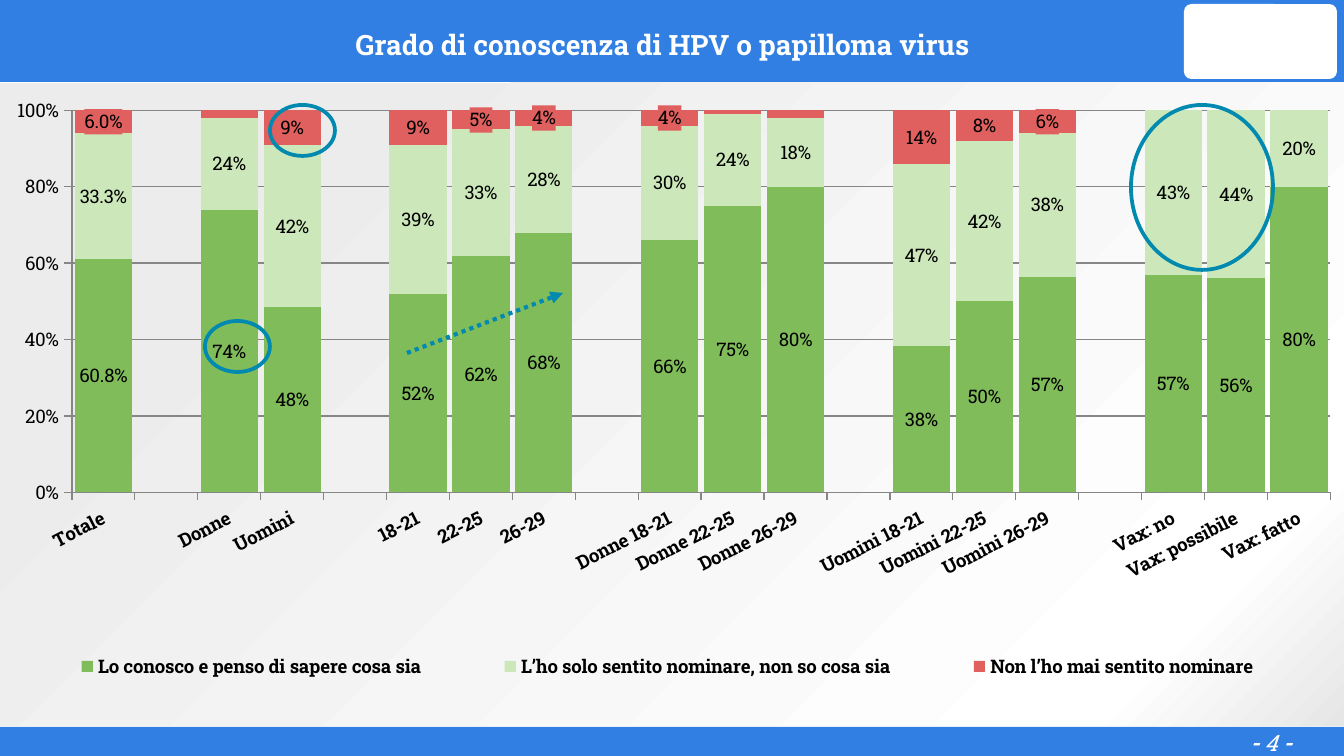
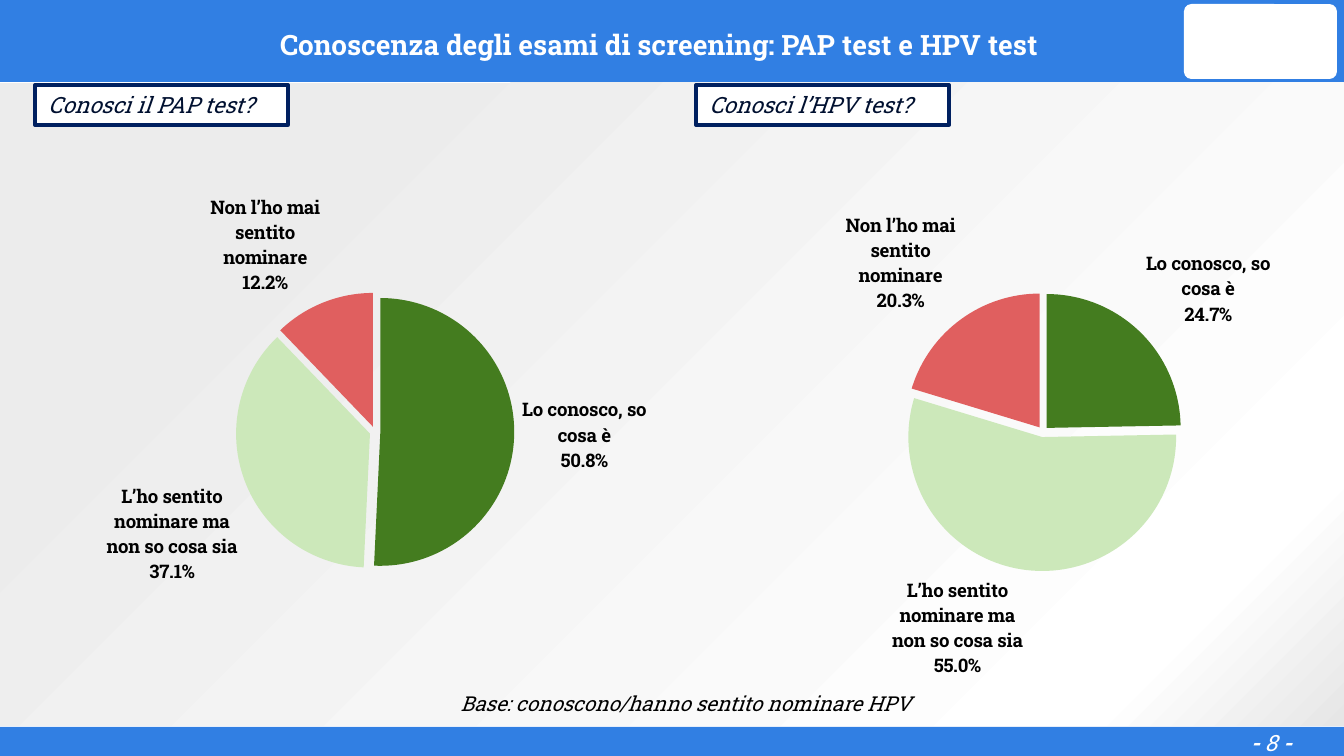
import copy
from dataclasses import dataclass

import pptx
import pptx.chart.data
import pptx.dml.color
import pptx.enum.chart
import pptx.enum.dml
import pptx.enum.shapes
import pptx.enum.text
import pptx.oxml
import pptx.oxml.ns
import pptx.util

SHAPES = pptx.enum.shapes.MSO_SHAPE
ALIGN = pptx.enum.text.PP_ALIGN
CHARTS = pptx.enum.chart.XL_CHART_TYPE
LABELS = pptx.enum.chart.XL_LABEL_POSITION


@dataclass(frozen=True)
class Theme:
    font: str = "Roboto Slab"
    band: str = "317FE3"
    white: str = "FFFFFF"
    black: str = "000000"
    question: str = "001030"
    frame: str = "002060"
    accent: str = "0189AF"
    grid: str = "868686"
    green: str = "81BC5B"
    dark_green: str = "447C1F"
    pale_green: str = "CCE8BA"
    red: str = "E05F5F"
    backdrop: tuple = ((0, "E6E6E6"), (13, "FFFFFF"), (82, "ECECEC"))
    title_size: int = 15
    body_size: int = 12
    note_size: int = 11
    chart_size: int = 10


THEME = Theme()
SCALE = 914400 / 134.4
WIDTH, HEIGHT = 1344, 756
CHART_TOP, CHART_HEIGHT = 85, 639

KNOWLEDGE_TITLE = "Grado di conoscenza di HPV o papilloma virus"
GROUPS = [
    [("Totale", 0.61, 0.33, 0.06)],
    [("Donne", 0.74, 0.24, 0.02), ("Uomini", 0.48, 0.42, 0.09)],
    [("18-21", 0.52, 0.39, 0.09), ("22-25", 0.62, 0.33, 0.05), ("26-29", 0.68, 0.28, 0.04)],
    [("Donne 18-21", 0.66, 0.3, 0.04), ("Donne 22-25", 0.75, 0.24, 0.01),
     ("Donne 26-29", 0.8, 0.18, 0.02)],
    [("Uomini 18-21", 0.38, 0.47, 0.14), ("Uomini 22-25", 0.5, 0.42, 0.08),
     ("Uomini 26-29", 0.57, 0.38, 0.06)],
    [("Vax: no", 0.57, 0.43, 0), ("Vax: possibile", 0.56, 0.44, 0), ("Vax: fatto", 0.8, 0.2, 0)],
]
ANSWERS = [
    ("Lo conosco e penso di sapere cosa sia", THEME.green, "60.8%"),
    ("L’ho solo sentito nominare, non so cosa sia", THEME.pale_green, "33.3%"),
    ("Non l’ho mai sentito nominare", THEME.red, "6.0%"),
]
SMALLEST_LABELLED = 0.03
HIGHLIGHTS = [(205, 321, 65, 51), (270, 105, 65, 51), (1131, 105, 142, 165)]
TREND = (407, 353, 563, 293)

SCREENING_TITLE = "Conoscenza degli esami di screening: PAP test e HPV test"
SCREENING_ANSWERS = [
    ("Lo conosco, so cosa è", THEME.dark_green),
    ("L’ho sentito nominare ma non so cosa sia", THEME.pale_green),
    ("Non l’ho mai sentito nominare", THEME.red),
]
TESTS = [
    ("Conosci il PAP test?", (0.508, 0.371, 0.122), 4, 35),
    ("Conosci l’HPV test?", (0.247, 0.55, 0.203), 672, 696),
]
BASE_NOTE = "Base: conoscono/hanno sentito nominare HPV"


def px(value):
    return pptx.util.Emu(round(value * SCALE))


def box(*lengths):
    return [px(length) for length in lengths]


def rgb(colour):
    return pptx.dml.color.RGBColor.from_string(colour)


def xml(tag, content="", attributes=""):
    namespaces = pptx.oxml.ns.nsdecls("a", "c")
    return pptx.oxml.parse_xml(f"<{tag} {namespaces} {attributes}>{content}</{tag}>")


def add_shape(slide, kind, bounds, fill=None, line=None):
    shape = slide.shapes.add_shape(kind, *box(*bounds))
    shape.shadow.inherit = False
    if fill:
        shape.fill.solid()
        shape.fill.fore_color.rgb = rgb(fill)
    else:
        shape.fill.background()
    if line:
        shape.line.color.rgb = rgb(line)
        shape.line.width = pptx.util.Pt(2)
    else:
        shape.line.fill.background()
    return shape


def write(shape, runs, size, colour, align, italic=False):
    frame = shape.text_frame
    frame.word_wrap = True
    frame.vertical_anchor = pptx.enum.text.MSO_ANCHOR.MIDDLE
    paragraph = frame.paragraphs[0]
    paragraph.alignment = align
    for text, bold in runs:
        run = paragraph.add_run()
        run.text = text
        run.font.name = THEME.font
        run.font.size = pptx.util.Pt(size)
        run.font.bold = bold
        run.font.italic = italic
        run.font.color.rgb = rgb(colour)
    return paragraph


def add_text(slide, bounds, *style, **emphasis):
    shape = slide.shapes.add_textbox(*box(*bounds))
    return shape, write(shape, *style, **emphasis)


def add_base(presentation, title, number, title_inset):
    slide = presentation.slides.add_slide(presentation.slide_layouts[6])
    backdrop = add_shape(slide, SHAPES.RECTANGLE, (0, 83, WIDTH, 643), THEME.white)
    stops = "".join(f'<a:gs pos="{position * 1000}"><a:srgbClr val="{colour}"/></a:gs>'
                    for position, colour in THEME.backdrop)
    gradient = xml("a:gradFill", f'<a:gsLst>{stops}</a:gsLst><a:path path="circle">'
                   '<a:fillToRect l="100000" t="100000"/></a:path>')
    properties = backdrop._element.spPr
    properties.replace(properties.find(pptx.oxml.ns.qn("a:solidFill")), gradient)

    add_shape(slide, SHAPES.RECTANGLE, (0, 0, WIDTH, 82), THEME.band)
    add_shape(slide, SHAPES.RECTANGLE, (0, 727, WIDTH, HEIGHT - 727), THEME.band)
    badge = add_shape(slide, SHAPES.ROUNDED_RECTANGLE, (1184, 4, 153, 75), THEME.white)
    badge.adjustments[0] = 0.1

    footer, _ = add_text(slide, (1202, 731, 138, 23),
                         [("- ", True), (str(number), False), (" -", True)],
                         THEME.body_size, THEME.white, ALIGN.CENTER, italic=True)
    footer.text_frame.margin_top = footer.text_frame.margin_bottom = px(5)
    heading, paragraph = add_text(slide, (9, 3, 1167, 79), [(title, True)],
                                  THEME.title_size, THEME.white, ALIGN.CENTER)
    heading.text_frame.margin_left = px(title_inset)
    paragraph.line_spacing = pptx.util.Pt(20)
    return slide


def layout(left, top, width, height, target=""):
    sizes = zip("xywh", (left, top, width, height))
    modes = '<c:xMode val="edge"/><c:yMode val="edge"/>'
    values = "".join(f'<c:{name} val="{value}"/>' for name, value in sizes)
    return xml("c:layout", f"<c:manualLayout>{target}{modes}{values}</c:manualLayout>")


def remove_layout(element):
    for old in element.findall(pptx.oxml.ns.qn("c:layout")):
        element.remove(old)


def place_plot(chart, target, *bounds):
    area = chart._chartSpace.chart.plotArea
    remove_layout(area)
    area.insert(0, layout(*bounds, target=f'<c:layoutTarget val="{target}"/>'))


def add_chart(slide, kind, left, width, categories, series, number_format):
    data = pptx.chart.data.CategoryChartData(number_format=number_format)
    data.categories = categories
    for name, values in series:
        data.add_series(name, values)
    bounds = box(left, CHART_TOP, width, CHART_HEIGHT)
    chart = slide.shapes.add_chart(kind, *bounds, data).chart
    chart.has_title = False
    chart.has_legend = False
    chart.font.name = THEME.font
    chart.font.size = pptx.util.Pt(THEME.chart_size)
    chart.font.color.rgb = rgb(THEME.black)
    return chart


def style_labels(series, number_format, position, bold=False):
    labels = series.data_labels
    labels.show_value = True
    labels.number_format = number_format
    labels.number_format_is_linked = False
    labels.position = position
    labels.font.size = pptx.util.Pt(THEME.chart_size)
    labels.font.name = THEME.font
    labels.font.bold = bold
    labels.font.color.rgb = rgb(THEME.black)
    return labels


def set_point_labels(labels, values, total):
    element = labels._element
    shared = [child for child in element if not child.tag.endswith("showLeaderLines")]
    first = xml("c:dLbl", '<c:idx val="0"/>')
    for child in shared:
        first.append(copy.deepcopy(child))
    first.find(pptx.oxml.ns.qn("c:numFmt")).set("formatCode", f'"{total}"')
    hidden = [xml("c:dLbl", f'<c:idx val="{index}"/><c:delete val="1"/>')
              for index, value in enumerate(values)
              if value is None or value < SMALLEST_LABELLED]
    for index, label in enumerate([first] + hidden):
        element.insert(index, label)


def style_axes(chart):
    for axis in (chart.category_axis, chart.value_axis):
        axis.major_tick_mark = pptx.enum.chart.XL_TICK_MARK.OUTSIDE
        axis.format.line.color.rgb = rgb(THEME.grid)
        axis.tick_labels.font.size = pptx.util.Pt(THEME.chart_size)
    chart.category_axis.tick_labels.font.bold = True
    chart.category_axis._element.txPr.bodyPr.set("rot", str(-27 * 60000))
    values = chart.value_axis
    values.minimum_scale, values.maximum_scale, values.major_unit = 0, 1, 0.2
    values.tick_labels.number_format = "0%"
    values.tick_labels.number_format_is_linked = False
    values.major_gridlines.format.line.color.rgb = rgb(THEME.grid)


def add_legend(chart):
    chart.has_legend = True
    legend = chart.legend
    legend.position = pptx.enum.chart.XL_LEGEND_POSITION.BOTTOM
    legend.include_in_layout = False
    legend.font.size = pptx.util.Pt(THEME.chart_size)
    legend.font.bold = True
    element = legend._element
    remove_layout(element)
    element.find(pptx.oxml.ns.qn("c:legendPos")).addnext(layout(0, 0.87, 0.99, 0.08))


def build_knowledge(presentation):
    slide = add_base(presentation, KNOWLEDGE_TITLE, 4, 154)
    rows = list(GROUPS[0])
    for group in GROUPS[1:]:
        rows += [("", None, None, None)] + group
    categories, *columns = zip(*rows)
    series_data = [(answer[0], column) for answer, column in zip(ANSWERS, columns)]
    chart = add_chart(slide, CHARTS.COLUMN_STACKED_100, 4, 1340,
                      categories, series_data, "0%")
    plot = chart.plots[0]
    plot.gap_width, plot.overlap, plot.vary_by_categories = 10, 100, False
    for series, (_, colour, total), values in zip(plot.series, ANSWERS, columns):
        series.format.fill.solid()
        series.format.fill.fore_color.rgb = rgb(colour)
        labels = style_labels(series, "0%", LABELS.CENTER)
        fill = xml("c:spPr", f'<a:solidFill><a:srgbClr val="{colour}"/></a:solidFill>')
        labels._element.find(pptx.oxml.ns.qn("c:txPr")).addprevious(fill)
        set_point_labels(labels, values, total)
    style_axes(chart)
    add_legend(chart)
    place_plot(chart, "outer", 0.01, 0.02, 0.98, 0.76)

    for bounds in HIGHLIGHTS:
        add_shape(slide, SHAPES.OVAL, bounds, line=THEME.accent)
    arrow = slide.shapes.add_connector(pptx.enum.shapes.MSO_CONNECTOR.STRAIGHT, *box(*TREND))
    arrow.line.color.rgb = rgb(THEME.accent)
    arrow.line.width = pptx.util.Pt(2.25)
    arrow.line.dash_style = pptx.enum.dml.MSO_LINE.ROUND_DOT
    arrow.line._get_or_add_ln().append(xml("a:tailEnd", attributes='type="triangle"'))
    arrow._element.spPr.append(xml("a:effectLst"))


def build_screening(presentation):
    slide = add_base(presentation, SCREENING_TITLE, 8, 147)
    categories = [name for name, _ in SCREENING_ANSWERS]
    for question, values, chart_left, question_left in TESTS:
        chart = add_chart(slide, CHARTS.PIE, chart_left, 668,
                          categories, [("Series 1", values)], "0.0%")
        chart.plots[0].vary_by_categories = True
        series = chart.plots[0].series[0]
        for index, (_, colour) in enumerate(SCREENING_ANSWERS):
            fill = series.points[index].format.fill
            fill.solid()
            fill.fore_color.rgb = rgb(colour)
        labels = style_labels(series, "0.0%", LABELS.OUTSIDE_END, bold=True)
        labels.show_category_name = True
        labels.show_percentage = False
        bubble = labels._element.find(pptx.oxml.ns.qn("c:showBubbleSize"))
        bubble.addnext(xml("c:separator", "\n"))
        first_point = series._element.find(pptx.oxml.ns.qn("c:dPt"))
        first_point.addprevious(xml("c:explosion", attributes='val="4"'))
        place_plot(chart, "inner", 0.347, 0.325, 0.417, 0.436)

        frame = add_shape(slide, SHAPES.RECTANGLE, (question_left, 85, 253, 40),
                          THEME.white, THEME.frame)
        write(frame, [(question, False)], THEME.body_size, THEME.question,
              ALIGN.JUSTIFY, italic=True)
    add_text(slide, (436, 684, 489, 39), [(BASE_NOTE, False)], THEME.note_size,
             THEME.black, ALIGN.RIGHT, italic=True)


def main():
    presentation = pptx.Presentation()
    presentation.slide_width, presentation.slide_height = box(WIDTH, HEIGHT)
    build_knowledge(presentation)
    build_screening(presentation)
    presentation.save("out.pptx")


if __name__ == "__main__":
    main()
